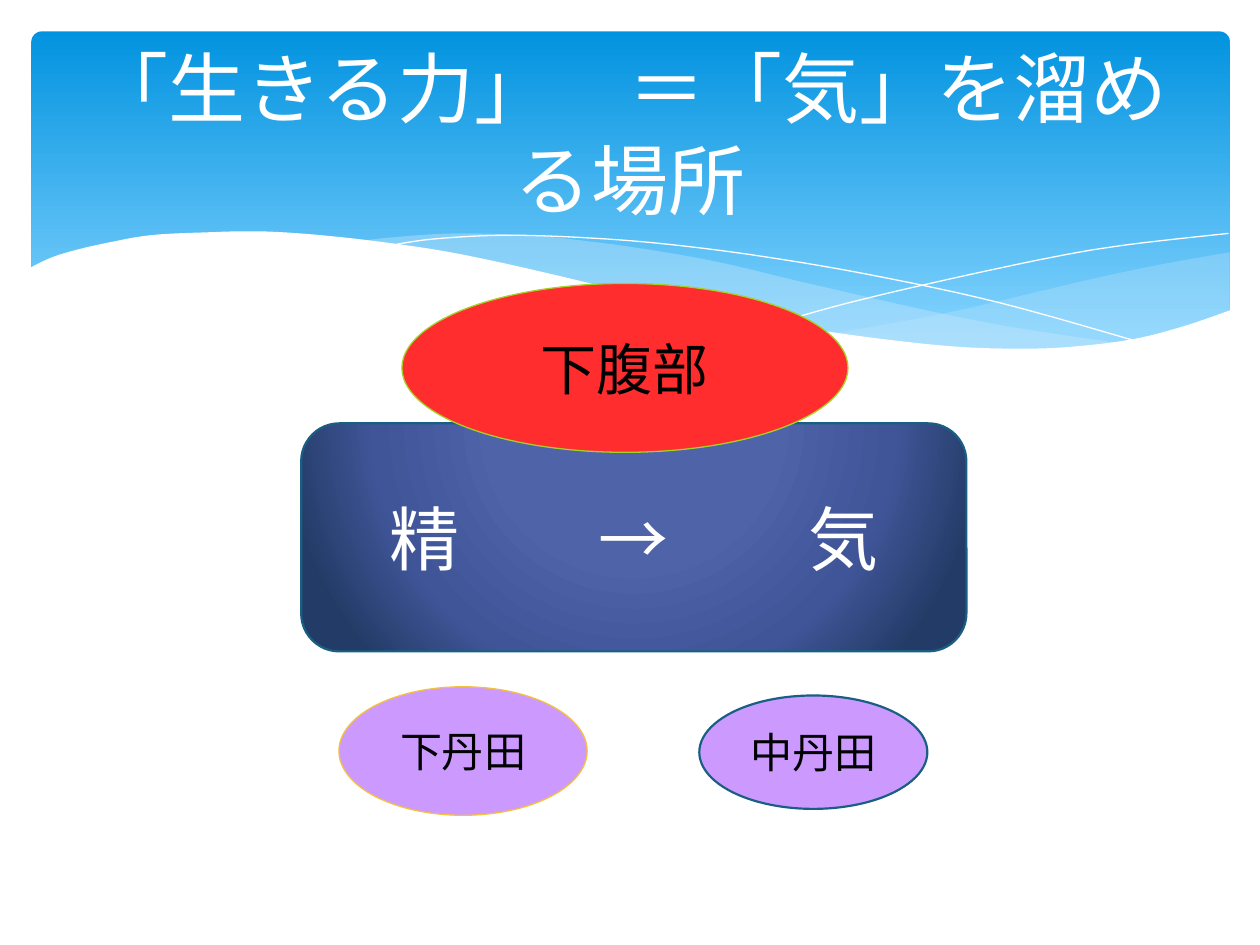
import pptx
import pptx.dml.color
import pptx.enum.shapes
import pptx.enum.text
import pptx.oxml.ns
import pptx.util
from lxml import etree

SHAPES = pptx.enum.shapes.MSO_SHAPE
qn = pptx.oxml.ns.qn

THEME = {
    "font": "Noto Sans CJK JP",
    "title_size": 44, "flow_size": 40, "belly_size": 32, "field_size": 24,
    "light": "FFFFFF", "dark": "000000", "mist": "C6E7FC",
    "red": "FF2D2D", "violet": "CC99FF",
    "blue": "195F84", "green": "A5D028", "gold": "F5C040",
    "sky": [(0, "0293E0"), (90, "83D3FE")],
    "navy": [(40, "4E63A8"), (74, "405598"), (100, "233C67")],
}

# Positions and points are percentages of the slide's width and height.
BANNER = (2.5, 3.33, 95.1, 36)
TITLE = ("「生きる力」　＝「気」を溜める場所", (5, 4.93, 90, 18.27))

WAVES = [
    {"fill": "mist", "alpha": 29, "curves": [
        [(97.6, 26.7), (92.1, 28), (86.1, 29.7), (77.9, 32.3), (72.9, 33.7), (66.1, 35.3)],
        [(66.1, 35.3), (71.9, 36.2), (75.7, 36.8), (80.3, 37), (85.4, 36.8), (89.7, 36),
         (93.5, 34.9), (97.6, 32.9)]]},
    {"fill": "mist", "alpha": 40, "curves": [
        [(89.3, 36.4), (80.7, 34.7), (74.1, 33), (66.8, 30.8), (62.9, 29.6), (56.9, 27.7),
         (51.4, 26.4), (46.5, 25.5), (42, 24.9), (36.1, 24.7), (31.3, 25.1), (28.6, 25.5)],
        [(28.6, 25.5), (34.2, 26.5), (40.4, 28.1), (44.9, 29.6), (53, 32), (60.1, 34),
         (66.5, 35.5), (72.2, 36.5), (78.5, 37), (84.8, 36.9), (89.3, 36.4)]]},
    {"line": "light", "curves": [
        [(30.9, 26), (34.4, 25.3), (40.1, 24.9), (46.9, 25.2), (53.3, 25.9), (60.8, 27.2),
         (69.5, 29.2), (79.5, 32.1), (90.7, 36.3)]]},
    {"line": "light", "curves": [
        [(61.3, 34.3), (67.2, 32.1), (74.8, 29.7), (83.6, 27.2), (89.5, 25.9), (97.5, 24.7)]]},
    {"fill": "light", "curves": [
        [(97.7, 32.8), (94, 34.5), (89.9, 35.9), (85, 36.7), (80.9, 36.9), (76.1, 36.7),
         (70.8, 36), (64.8, 34.9), (57.9, 33.3), (50.3, 31.1), (44.7, 29.3), (39.1, 27.6),
         (34, 26.3), (27.1, 25.1), (21.1, 24.5), (16.1, 24.6), (11.9, 24.9), (8.5, 25.7),
         (5.9, 26.5), (4, 27.3), (2.3, 28.4)],
        [(2.3, 43.9), (97.7, 43.9)]]},
]

NODES = [
    ("精　　→　　気", SHAPES.FLOWCHART_ALTERNATE_PROCESS, (23.9, 44.8, 52.8, 24.13),
     "navy", "blue", 1.25, "flow_size", "light"),
    ("下腹部", SHAPES.OVAL, (31.9, 30, 35.4, 17.87), "red", "green", 0.75, "belly_size", "dark"),
    ("下丹田", SHAPES.OVAL, (26.9, 72.67, 19.7, 13.6), "violet", "gold", 0.75, "field_size", "dark"),
    ("中丹田", SHAPES.OVAL, (55.5, 73.6, 18.1, 12), "violet", "blue", 1.25, "field_size", "dark"),
]

presentation = pptx.Presentation()
presentation.slide_width = pptx.util.Inches(10)
presentation.slide_height = pptx.util.Inches(7.5)
slide = presentation.slides.add_slide(presentation.slide_layouts[6])


def place(x, y):
    return (round(presentation.slide_width * x / 100),
            round(presentation.slide_height * y / 100))


def box(area):
    return *place(*area[:2]), *place(*area[2:])


def color(name):
    return pptx.dml.color.RGBColor.from_string(THEME[name])


def fill_solid(shape, name, alpha=None):
    shape.fill.solid()
    shape.fill.fore_color.rgb = color(name)
    if alpha:
        tint = shape._element.spPr.find(qn("a:solidFill"))[0]
        etree.SubElement(tint, qn("a:alpha"), val=str(alpha * 1000))


def fill_gradient(shape, name, focus=None):
    shape.fill.gradient()
    gradient = shape._element.spPr.find(qn("a:gradFill"))
    for child in list(gradient):
        gradient.remove(child)
    stops = etree.SubElement(gradient, qn("a:gsLst"))
    for position, value in THEME[name]:
        stop = etree.SubElement(stops, qn("a:gs"), pos=str(position * 1000))
        etree.SubElement(stop, qn("a:srgbClr"), val=value)
    if focus:
        circle = etree.SubElement(gradient, qn("a:path"), path="circle")
        sides = {side: str(share * 1000) for side, share in zip("ltrb", focus)}
        etree.SubElement(circle, qn("a:fillToRect"), **sides)
    else:
        etree.SubElement(gradient, qn("a:lin"), ang="5400000", scaled="0")


def write(shape, text, size, name):
    frame = shape.text_frame
    frame.word_wrap = True
    frame.vertical_anchor = pptx.enum.text.MSO_ANCHOR.MIDDLE
    paragraph = frame.paragraphs[0]
    paragraph.text = text
    paragraph.alignment = pptx.enum.text.PP_ALIGN.CENTER
    paragraph.font.size = pptx.util.Pt(THEME[size])
    paragraph.font.color.rgb = color(name)
    paragraph.font.name = THEME["font"]
    properties = paragraph._p.pPr.find(qn("a:defRPr"))
    etree.SubElement(properties, qn("a:ea"), typeface=THEME["font"])


def smooth(points, steps=6):
    if len(points) < 3:
        return points
    padded = [points[0], *points, points[-1]]
    result = [points[0]]
    for a, b, c, d in zip(padded, padded[1:], padded[2:], padded[3:]):
        for step in range(1, steps + 1):
            t = step / steps
            result.append(tuple(
                (2 * q + (r - p) * t + (2 * p - 5 * q + 4 * r - s) * t ** 2
                 + (3 * q - p - 3 * r + s) * t ** 3) / 2
                for p, q, r, s in zip(a, b, c, d)))
    return result


def add_wave(curves, fill=None, alpha=None, line=None):
    points = [place(*point) for curve in curves for point in smooth(curve)]
    builder = slide.shapes.build_freeform(*points[0])
    builder.add_line_segments(points[1:], close=bool(fill))
    shape = builder.convert_to_shape()
    shape.shadow.inherit = False
    if fill:
        fill_solid(shape, fill, alpha)
        shape.line.fill.background()
    else:
        shape.fill.background()
        shape.line.color.rgb = color(line)
        shape.line.width = 0


banner = slide.shapes.add_shape(SHAPES.ROUNDED_RECTANGLE, *box(BANNER))
banner.adjustments[0] = 0.03
banner.shadow.inherit = False
banner.line.fill.background()
fill_gradient(banner, "sky")

for wave in WAVES:
    add_wave(**wave)

title_text, title_area = TITLE
write(slide.shapes.add_textbox(*box(title_area)), title_text, "title_size", "light")

for text, kind, area, fill, outline, width, size, ink in NODES:
    node = slide.shapes.add_shape(kind, *box(area))
    node.shadow.inherit = False
    if fill == "navy":
        fill_gradient(node, fill, focus=(20, -40, 20, 140))
    else:
        fill_solid(node, fill)
    node.line.color.rgb = color(outline)
    node.line.width = pptx.util.Pt(width)
    write(node, text, size, ink)

presentation.save("out.pptx")
